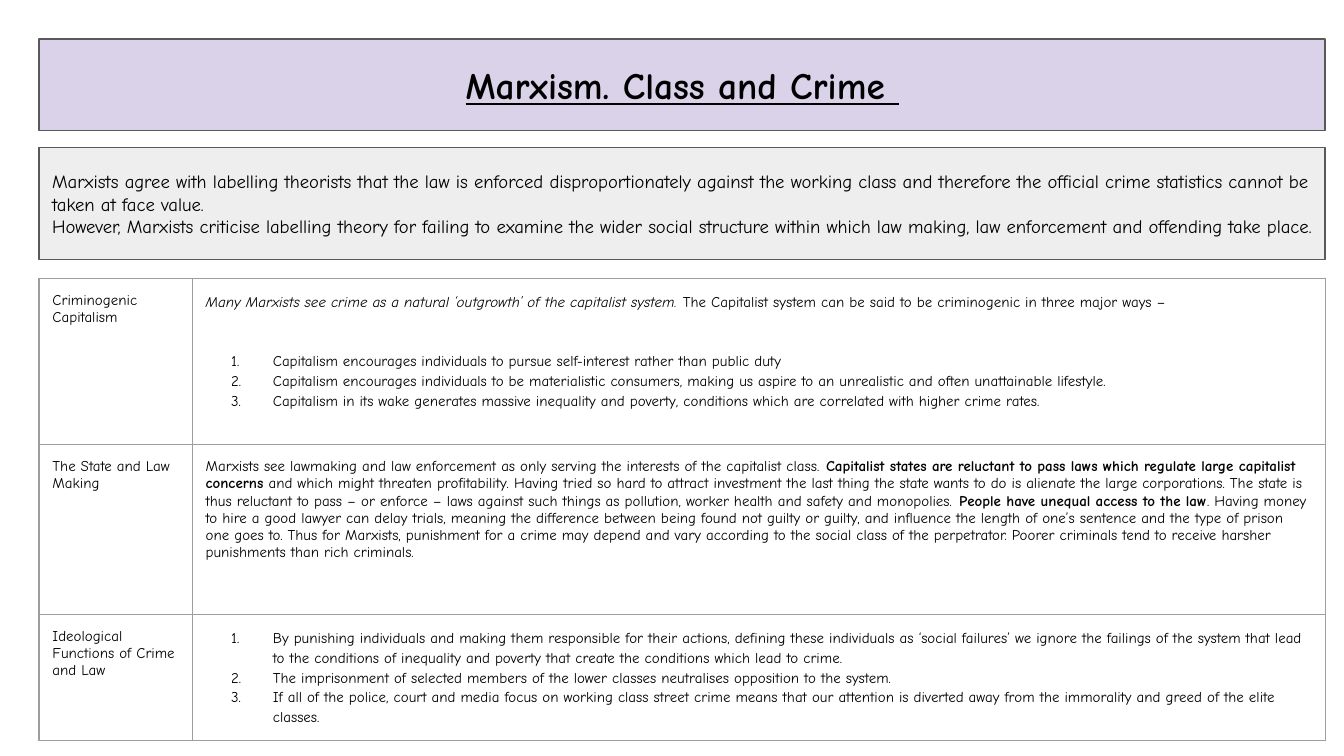
from dataclasses import dataclass

from pptx import Presentation
from pptx.dml.color import RGBColor
from pptx.enum.shapes import MSO_SHAPE
from pptx.enum.text import MSO_ANCHOR, MSO_AUTO_SIZE, PP_ALIGN
from pptx.oxml import parse_xml
from pptx.oxml.ns import nsdecls
from pptx.util import Inches, Pt

FONT = "Comic Neue"
COLORS = {
    "text": "000000",
    "title_fill": "D9D2E9",
    "intro_fill": "EEEEEE",
    "box_line": "595959",
    "grid": "9E9E9E",
}
PAGE_WIDTH = 10
PAGE_HEIGHT = PAGE_WIDTH * 9 / 16
LEFT, WIDTH = 0.29, 9.57
INSET = Inches(0.1)
COLUMN_WIDTHS = (1.14, 8.43)


@dataclass(frozen=True)
class Span:
    text: str
    bold: bool = False
    italic: bool = False


@dataclass(frozen=True)
class Para:
    spans: tuple[Span, ...]
    numbered: bool = False
    line_spacing: float = 1.0
    space_before: float = 0


@dataclass(frozen=True)
class Topic:
    heading: str
    height: float
    paras: tuple[Para, ...]


def numbered(*items: str, space_before: float = 0) -> tuple[Para, ...]:
    """Make a numbered list, with space above its first item only."""
    return tuple(
        Para((Span(item),), True, 1.15, 0 if index else space_before)
        for index, item in enumerate(items)
    )


INTRO = (
    Para((Span("Marxists agree with labelling theorists that the law is enforced disproportionately "
               "against the working class and therefore the official crime statistics cannot be "
               "taken at face value."),)),
    Para((Span("However, Marxists criticise labelling theory for failing to examine the wider social "
               "structure within which law making, law enforcement and offending take place."),)),
)

TOPICS = (
    Topic("Criminogenic Capitalism", 1.24, (
        Para((
            Span("Many Marxists see crime as a natural ‘outgrowth’ of the capitalist system. ", italic=True),
            Span("The Capitalist system can be said to be criminogenic in three major ways –"),
        ), line_spacing=1.15),
        *numbered(
            "Capitalism encourages individuals to pursue self-interest rather than public duty",
            "Capitalism encourages individuals to be materialistic consumers, making us aspire to an "
            "unrealistic and often unattainable lifestyle.",
            "Capitalism in its wake generates massive inequality and poverty, conditions which are "
            "correlated with higher crime rates.",
            space_before=21,
        ),
    )),
    Topic("The State and Law Making", 1.26, (
        Para((
            Span("Marxists see lawmaking and law enforcement as only serving the interests of the "
                 "capitalist class. "),
            Span("Capitalist states are reluctant to pass laws which regulate large capitalist "
                 "concerns", bold=True),
            Span(" and which might threaten profitability. Having tried so hard to attract investment "
                 "the last thing the state wants to do is alienate the large corporations. The state is "
                 "thus reluctant to pass – or enforce – laws against such things as pollution, worker "
                 "health and safety and monopolies. "),
            Span("People have unequal access to the law", bold=True),
            Span(". Having money to hire a good lawyer can delay trials, meaning the difference between "
                 "being found not guilty or guilty, and influence the length of one’s sentence and the "
                 "type of prison one goes to. Thus for Marxists, punishment for a crime may depend and "
                 "vary according to the social class of the perpetrator. Poorer criminals tend to "
                 "receive harsher punishments than rich criminals."),
        )),
    )),
    Topic("Ideological Functions of Crime and Law", 0.94, numbered(
        "By punishing individuals and making them responsible for their actions, defining these "
        "individuals as ‘social failures’ we ignore the failings of the system that lead to the "
        "conditions of inequality and poverty that create the conditions which lead to crime.",
        "The imprisonment of selected members of the lower classes neutralises opposition to the system.",
        "If all of the police, court and media focus on working class street crime means that our "
        "attention is diverted away from the immorality and greed of the elite classes.",
    )),
)


def rgb(name: str) -> RGBColor:
    return RGBColor.from_string(COLORS[name])


def style_font(font, size: float, bold: bool = False, italic: bool = False) -> None:
    font.name, font.size = FONT, Pt(size)
    font.bold, font.italic = bold, italic
    font.color.rgb = rgb("text")


def add_number(paragraph) -> None:
    properties = paragraph._p.get_or_add_pPr()
    properties.set("marL", str(Inches(0.5)))
    properties.set("indent", str(Inches(-0.31)))
    for xml in (
        f'<a:buClr {nsdecls("a")}><a:srgbClr val="{COLORS["text"]}"/></a:buClr>',
        f'<a:buFont {nsdecls("a")} typeface="{FONT}"/>',
        f'<a:buAutoNum {nsdecls("a")} type="arabicPeriod"/>',
    ):
        properties.append(parse_xml(xml))


def write_paras(frame, paras: tuple[Para, ...], size: float) -> None:
    for index, para in enumerate(paras):
        paragraph = frame.add_paragraph() if index else frame.paragraphs[0]
        paragraph.alignment = PP_ALIGN.LEFT
        paragraph.line_spacing = para.line_spacing
        paragraph.space_before = Pt(para.space_before)
        if para.numbered:
            add_number(paragraph)
        for span in para.spans:
            run = paragraph.add_run()
            run.text = span.text
            style_font(run.font, size, span.bold, span.italic)


def set_insets(target) -> None:
    target.margin_left = target.margin_right = INSET
    target.margin_top = target.margin_bottom = INSET


def style_box(box, top: float, height: float, fill: str) -> None:
    box.left, box.top = Inches(LEFT), Inches(top)
    box.width, box.height = Inches(WIDTH), Inches(height)
    box.fill.solid()
    box.fill.fore_color.rgb = rgb(fill)
    box.line.color.rgb = rgb("box_line")
    box.line.width = Pt(0.75)
    frame = box.text_frame
    frame.word_wrap = True
    frame.auto_size = MSO_AUTO_SIZE.NONE
    frame.vertical_anchor = MSO_ANCHOR.MIDDLE
    set_insets(frame)


def style_cell(cell) -> None:
    set_insets(cell)
    cell.vertical_anchor = MSO_ANCHOR.TOP
    cell.fill.background()
    properties = cell._tc.get_or_add_tcPr()
    for index, side in enumerate(("lnL", "lnR", "lnT", "lnB")):
        properties.insert(index, parse_xml(
            f'<a:{side} {nsdecls("a")} w="{Pt(0.75)}"><a:solidFill>'
            f'<a:srgbClr val="{COLORS["grid"]}"/></a:solidFill></a:{side}>'
        ))


def add_topic_table(page, topics: tuple[Topic, ...], top: float) -> None:
    height = sum(topic.height for topic in topics)
    table = page.shapes.add_table(
        len(topics), len(COLUMN_WIDTHS), Inches(LEFT), Inches(top), Inches(WIDTH), Inches(height)
    ).table
    table.first_row = table.horz_banding = False
    for column, width in zip(table.columns, COLUMN_WIDTHS):
        column.width = Inches(width)
    for row, topic in zip(table.rows, topics):
        row.height = Inches(topic.height)
        for cell, paras in zip(row.cells, ((Para((Span(topic.heading),)),), topic.paras)):
            style_cell(cell)
            write_paras(cell.text_frame, paras, 8)


def main() -> None:
    deck = Presentation()
    deck.slide_width, deck.slide_height = Inches(PAGE_WIDTH), Inches(PAGE_HEIGHT)
    page = deck.slides.add_slide(deck.slide_layouts[5])

    title = page.shapes.title
    style_box(title, 0.29, 0.68, "title_fill")
    title.text_frame.text = "Marxism. Class and Crime "
    heading = title.text_frame.paragraphs[0]
    heading.alignment = PP_ALIGN.CENTER
    style_font(heading.runs[0].font, 20, bold=True)
    heading.runs[0].font.underline = True

    intro = page.shapes.add_shape(MSO_SHAPE.RECTANGLE, 0, 0, 0, 0)
    intro.shadow.inherit = False
    style_box(intro, 1.1, 0.83, "intro_fill")
    write_paras(intro.text_frame, INTRO, 10)

    add_topic_table(page, TOPICS, 2.07)
    deck.save("out.pptx")


if __name__ == "__main__":
    main()
